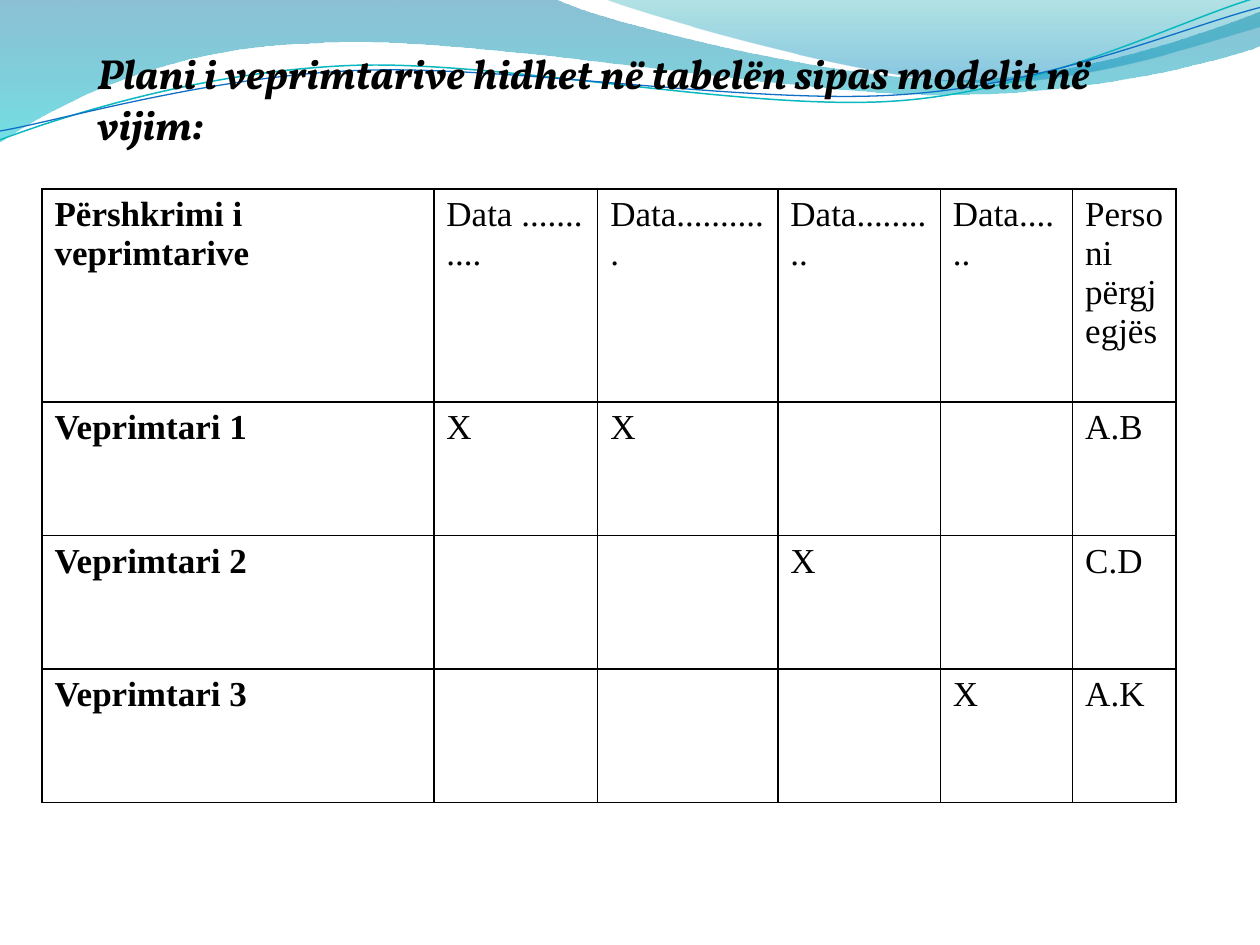
from math import cos, radians, sin

from lxml import etree
from pptx import Presentation
from pptx.dml.color import RGBColor
from pptx.enum.text import MSO_AUTO_SIZE
from pptx.oxml import parse_xml
from pptx.oxml.ns import nsdecls, qn
from pptx.util import Inches, Pt


def rgb(h):
    return RGBColor.from_string(h)


def draw_curve(start, segments, closed):
    pts = [start]
    for seg in segments:
        pts += zip(seg[::2], seg[1::2])
    pts = [(Inches(x), Inches(y)) for x, y in pts]
    fb = s.shapes.build_freeform(*pts[0])
    fb.add_line_segments(pts[1:], close=closed)
    sp = fb.convert_to_shape()
    sp.shadow.inherit = False
    lines = iter(list(sp._element.iter(qn("a:lnTo"))))
    for seg in segments:
        first = next(lines)
        if len(seg) == 6:
            first.tag = qn("a:cubicBezTo")
            for line in (next(lines), next(lines)):
                first.append(line[0])
                line.getparent().remove(line)
    return sp


prs = Presentation()
prs.slide_width, prs.slide_height = Inches(10), Inches(7.5)
s = prs.slides.add_slide(prs.slide_layouts[6])

waves = [
    ((0, 0), [(4.4, -0.01), (4.76, 0.17, 6.64, 0.63, 7.58, 0.63),
              (8.53, 0.63, 9.58, 0.26, 10, 0.09), (10.01, 0.36),
              (9.83, 0.44, 8.7, 0.76, 7.46, 0.75),
              (6.22, 0.75, 3.82, 0.28, 2.57, 0.34),
              (1.29, 0.36, 0.46, 0.83, -0.01, 1.13), (0, 0)],
     [(0, "0074A1", 45), (1, "00C6CF", 55)]),
    ((4.79, -0.01), [(5.09, 0.11, 6.82, 0.62, 7.69, 0.65),
                     (8.56, 0.69, 9.61, 0.32, 10, 0.21), (10, 0), (4.79, -0.01)],
     [(0, "00A1A9", 30), (0.8, "008BBF", 45)]),
]
for start, segments, stops in waves:
    sp = draw_curve(start, segments, True)
    sp.line.fill.background()
    sp.fill.gradient()
    sp.fill.gradient_angle = 270
    for stop, (pos, color, alpha) in zip(sp.fill.gradient_stops, stops):
        stop.position = pos
        stop.color.rgb = rgb(color)
    for clr, (pos, color, alpha) in zip(sp._element.spPr.iter(qn("a:srgbClr")), stops):
        etree.SubElement(clr, qn("a:alpha"), val=str(alpha * 1000))

tilt = 2.7
ca, sa = cos(radians(tilt)), sin(radians(tilt))
strands = [
    ([(0, 1.11), (0.48, 0.93, 1.58, 0.57, 2.77, 0.52),
      (3.95, 0.47, 5.93, 0.89, 7.13, 0.8),
      (8.33, 0.71, 9.38, 0.15, 9.98, -0.02)], (4.99, 0.57), "0AB8BF", 0.85),
    ([(0, 1.04), (0.47, 0.96, 1.64, 0.61, 2.83, 0.56),
      (4.03, 0.51, 5.97, 0.84, 7.17, 0.75),
      (8.36, 0.67, 9.41, 0.21, 10, 0.06)], (5, 0.59), "0F6FC6", 0.75),
]
for segments, (cx, cy), color, width in strands:
    level = []
    for seg in segments:
        pairs = [(x - cx, y - cy) for x, y in zip(seg[::2], seg[1::2])]
        level.append([v for x, y in pairs
                      for v in (cx + x * ca - y * sa, cy + x * sa + y * ca)])
    sp = draw_curve(level[0], level[1:], False)
    sp.rotation = 360 - tilt
    sp.fill.background()
    sp.line.color.rgb = rgb(color)
    sp.line.width = Pt(width)

tf = s.shapes.add_textbox(Inches(0.67), Inches(0.33), Inches(8.75), Inches(0.5)).text_frame
tf.word_wrap = True
tf.auto_size = MSO_AUTO_SIZE.SHAPE_TO_FIT_TEXT
r = tf.paragraphs[0].add_run()
r.text = "Plani i veprimtarive hidhet në tabelën sipas modelit në vijim:"
r.font.color.rgb = rgb("000000")
for key, value in {"name": "Vollkorn", "size": Pt(24), "bold": True, "italic": True}.items():
    setattr(r.font, key, value)

rows = [
    ["Përshkrimi i veprimtarive", "Data ...........", "Data...........",
     "Data..........", "Data......", "Personi përgjegjës"],
    ["Veprimtari 1", "X", "X", "", "", "A.B"],
    ["Veprimtari 2", "", "", "X", "", "C.D"],
    ["Veprimtari 3", "", "", "", "X", "A.K"],
]
widths = [3.11, 1.3, 1.43, 1.29, 1.05, 0.82]
heights = [1.69, 1.06, 1.06, 1.06]
table = s.shapes.add_table(len(rows), len(widths), Inches(1 / 3), Inches(1.5),
                           Inches(9), Inches(4.87)).table
table.first_row = table.horz_banding = False
for col, w in zip(table.columns, widths):
    col.width = Inches(w)
for row, h in zip(table.rows, heights):
    row.height = Inches(h)
for i, row in enumerate(rows):
    for j, text in enumerate(row):
        cell = table.cell(i, j)
        tcPr = cell._tc.get_or_add_tcPr()
        for side in ("lnL", "lnR", "lnT", "lnB"):
            tcPr.append(parse_xml(
                f'<a:{side} {nsdecls("a")} w="{Pt(1)}"><a:solidFill>'
                f'<a:srgbClr val="000000"/></a:solidFill></a:{side}>'))
        cell.fill.background()
        if text:
            r = cell.text_frame.paragraphs[0].add_run()
            r.text = text
            r.font.color.rgb = rgb("000000")
            for key, value in {"name": "Times New Roman", "size": Pt(20), "bold": j == 0}.items():
                setattr(r.font, key, value)

prs.save("out.pptx")
